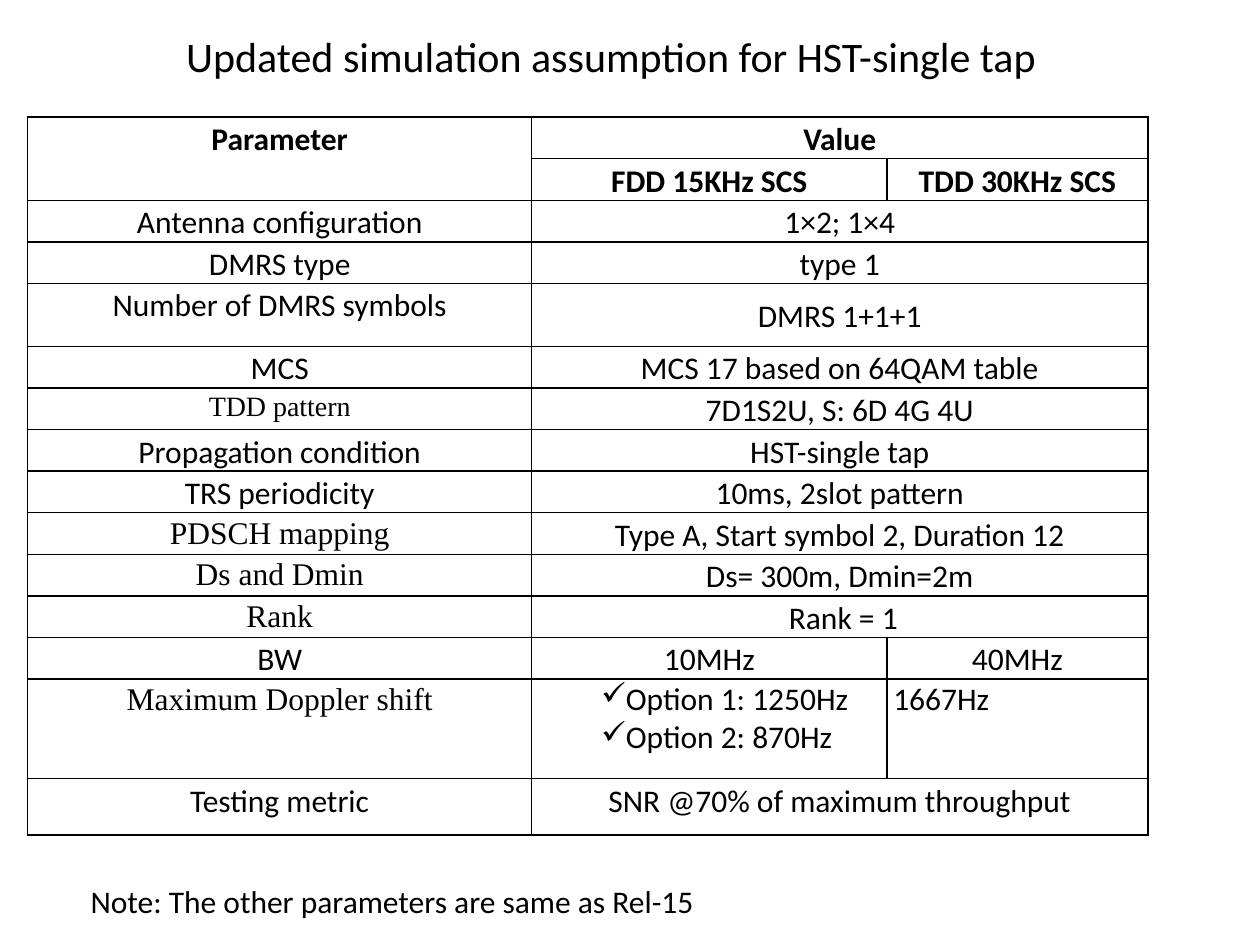
from lxml import etree
from pptx import Presentation
from pptx.dml.color import RGBColor
from pptx.enum.text import MSO_ANCHOR, PP_ALIGN
from pptx.oxml.ns import qn
from pptx.util import Inches, Pt

CENTER, LEFT = PP_ALIGN.CENTER, PP_ALIGN.LEFT
TOP, MIDDLE = MSO_ANCHOR.TOP, MSO_ANCHOR.MIDDLE
COLORS = {"ink": "000000", "paper": "FFFFFF"}
SANS = {"name": "Calibri", "size": Pt(18), "bold": False}
BOLD = {**SANS, "bold": True}
SERIF = {**SANS, "name": "Times New Roman"}
SMALL = {**SERIF, "size": Pt(16)}
TITLE = {**SANS, "size": Pt(24)}
INSETS = {"margin_left": Inches(0.05), "margin_right": Inches(0.05),
          "margin_top": Inches(0.01), "margin_bottom": 0}
WIDTHS = [4, 2.82, 2.07]
HEIGHT = 0.33
TALL = {"Number of DMRS symbols": 0.5, "Maximum Doppler shift": 0.79,
        "Testing metric": 0.45}
FONTS = {"TDD pattern": SMALL, "PDSCH mapping": SERIF, "Ds and Dmin": SERIF,
         "Rank": SERIF, "Maximum Doppler shift": SERIF}
MIDDLES = {"DMRS 1+1+1", "7D1S2U, S: 6D 4G 4U"}
SHIFT = "1667Hz"
ROWS = [
    ["Parameter", "Value"],
    ["", "FDD 15KHz SCS", "TDD 30KHz SCS"],
    ["Antenna configuration", "1×2; 1×4"],
    ["DMRS type", "type 1"],
    ["Number of DMRS symbols", "DMRS 1+1+1"],
    ["MCS", "MCS 17 based on 64QAM table"],
    ["TDD pattern", "7D1S2U, S: 6D 4G 4U"],
    ["Propagation condition", "HST-single tap"],
    ["TRS periodicity", "10ms, 2slot pattern"],
    ["PDSCH mapping", "Type A, Start symbol 2, Duration 12"],
    ["Ds and Dmin", "Ds= 300m, Dmin=2m"],
    ["Rank", " Rank = 1"],
    ["BW", "10MHz", "40MHz"],
    ["Maximum Doppler shift", "Option 1: 1250Hz\nOption 2: 870Hz", SHIFT],
    ["Testing metric", "SNR @70% of maximum throughput"],
]


def apply(target, values):
    """Set each attribute in values on the target."""
    for name, value in values.items():
        setattr(target, name, value)


def write(frame, text, font, align, gap=None):
    """Write one paragraph for each line of text."""
    frame.text = text
    for para in frame.paragraphs:
        apply(para, {"alignment": align, "line_spacing": gap})
        for run in para.runs:
            apply(run.font, font)
            run.font.color.rgb = RGBColor.from_string(COLORS["ink"])


def add_text(slide, box, text, font, align, wrap, anchor):
    """Add a text box."""
    frame = slide.shapes.add_textbox(*map(Inches, box)).text_frame
    apply(frame, {"word_wrap": wrap, "vertical_anchor": anchor})
    write(frame, text, font, align)


def add_ticks(frame):
    """Give each paragraph a hanging check mark."""
    for para in frame.paragraphs:
        props = para._p.get_or_add_pPr()
        props.set("marL", str(Inches(0.69)))
        props.set("indent", str(Inches(-0.19)))
        etree.SubElement(props, qn("a:buChar")).set("char", "✓")


def add_edges(cell):
    """Draw a thin line on the four sides of a cell."""
    props = cell._tc.get_or_add_tcPr()
    for spot, side in enumerate("LRTB"):
        line = etree.Element(qn("a:ln" + side), w=str(Pt(1)))
        fill = etree.SubElement(line, qn("a:solidFill"))
        etree.SubElement(fill, qn("a:srgbClr"), val=COLORS["ink"])
        props.insert(spot, line)


def fill_cell(cell, text, font):
    """Fill one cell with its text."""
    plain = "\n" in text or text == SHIFT
    apply(cell, INSETS)
    cell.vertical_anchor = MIDDLE if text in MIDDLES else TOP
    write(cell.text_frame, text, font, LEFT if plain else CENTER,
          None if plain else 1.06)
    if "\n" in text:
        add_ticks(cell.text_frame)


def add_grid(slide):
    """Add the table of simulation parameters."""
    heights = [TALL.get(row[0], HEIGHT) for row in ROWS]
    box = map(Inches, (0.22, 0.93, sum(WIDTHS), sum(heights)))
    table = slide.shapes.add_table(len(ROWS), len(WIDTHS), *box).table
    apply(table, {"first_row": False, "horz_banding": False})
    for col, width in zip(table.columns, WIDTHS):
        col.width = Inches(width)
    for cell in table.iter_cells():
        cell.fill.solid()
        cell.fill.fore_color.rgb = RGBColor.from_string(COLORS["paper"])
        add_edges(cell)
    table.cell(0, 0).merge(table.cell(1, 0))
    for i, (row, height) in enumerate(zip(ROWS, heights)):
        table.rows[i].height = Inches(height)
        if len(row) == 2:
            table.cell(i, 1).merge(table.cell(i, 2))
        for j, text in enumerate(row):
            if text:
                font = BOLD if i < 2 else FONTS.get(text, SANS)
                fill_cell(table.cell(i, j), text, font)


def main():
    """Build and save the slide."""
    deck = Presentation()
    apply(deck, {"slide_width": Inches(10), "slide_height": Inches(7.5)})
    slide = deck.slides.add_slide(deck.slide_layouts[6])
    add_text(slide, (0.35, 0.14, 9, 0.61),
             "Updated simulation assumption for HST-single tap",
             TITLE, CENTER, True, MIDDLE)
    add_grid(slide)
    add_text(slide, (0.62, 6.95, 5.05, 0.4),
             "Note: The other parameters are same as Rel-15",
             SANS, LEFT, False, TOP)
    deck.save("out.pptx")


if __name__ == "__main__":
    main()
